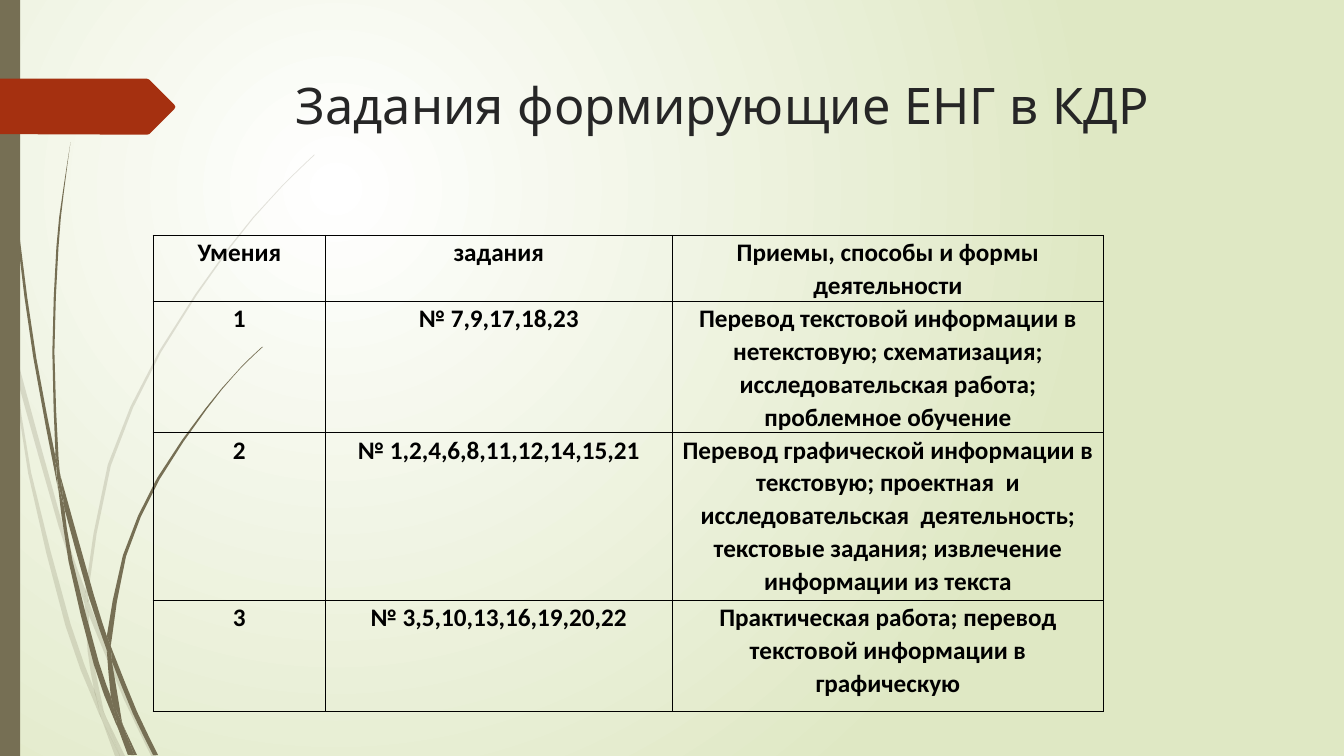
from dataclasses import dataclass
from lxml.etree import SubElement
from pptx import Presentation
from pptx.dml.color import RGBColor
from pptx.enum.shapes import MSO_SHAPE as Kind
from pptx.enum.text import MSO_ANCHOR as Anchor, PP_ALIGN as Align
from pptx.oxml.ns import qn
from pptx.util import Pt

Point = tuple[float, float]
Side = list[Point]

OLIVE, RUST, INK, BLACK = "766F54", "A53010", "262626", "000000"
WHITE, LIME = "FFFFFF", "DFE8C4"
STEPS = 2


@dataclass
class Plant:
    alpha: int
    blades: list[list[Side]]


@dataclass
class Style:
    font: str
    size: float
    color: str
    bold: bool = False


FAINT = Plant(20, [
    [[(7.9, 252), (6.5, 231.8), (0, 203)], [(0, 215.3), (7.2, 247.7)]],
    [[(12.2, 270.7), (41.8, 375.8), (60.5, 431.3)],
     [(61.2, 421.9), (44.6, 374.4), (10.1, 248.4)]],
    [[(63.4, 439.2), (88.6, 499.7), (108, 540)],
     [(111.6, 540), (91.4, 498.2), (66.2, 437), (63.4, 429.1)]],
    [[(85.7, 540)], [(89.3, 540), (75.6, 511.9)]],
    [[(7.9, 252), (20.2, 338.4), (46.8, 447.1), (66.2, 499), (72.7, 514.1)],
     [(71.3, 509), (67, 491.8), (50.4, 445.7), (22.3, 337.7), (12.2, 270.7)]],
    [[(60.5, 431.3), (62.6, 465.1), (67, 491.8), (69.1, 498.2), (75.6, 511.9)],
     [(74.2, 508.3), (65.5, 465.1), (63.4, 439.2), (63.4, 437.8)]],
    [[(63.4, 429.1), (63.4, 420.5), (79.2, 332.6), (115.2, 251.3),
      (164.9, 176.4), (193, 142.6), (208.8, 126), (224.6, 110.9)],
     [(224.6, 110.2), (208.1, 126), (193, 141.8), (164.2, 175.7),
      (113.8, 250.6), (77, 331.9), (61.2, 420.5), (61.2, 421.9)]],
    [[(72.7, 514.1), (82.1, 540)], [(85.7, 540)]],
    [[(63.4, 437.8), (63.4, 429.1)], [(61.2, 421.9), (60.5, 431.3)]],
    [[(69.1, 498.2), (67, 491.8)],
     [(71.3, 509), (72.7, 514.1), (85.7, 540)], [(75.6, 511.9)]],
])

DARK = Plant(100, [
    [[(2.2, 0), (2.9, 34.6), (5, 79.2), (12.2, 167.8), (23.8, 255.6),
      (40.3, 343.4), (41, 346.3)],
     [(39.6, 329), (39.6, 326.2), (25.9, 255.6), (13.7, 167), (5.8, 78.5),
      (3.6, 34.6), (2.9, 0)]],
    [[(46.1, 363.6), (63.4, 426.2), (76.3, 464.4)],
     [(76.3, 455.8), (76.3, 454.3), (67, 424.8), (43.2, 339.8)]],
    [[(79.9, 472.3), (95, 509.8), (109.4, 539.3)],
     [(113, 539.3), (97.9, 508.3), (81.4, 467.3), (79.2, 461.5)]],
    [[(41, 343.4), (49, 401), (67, 474.5), (79.9, 509.8), (84.2, 519.8)],
     [(83.5, 516.2), (79.2, 497.5), (70.6, 473), (51.8, 400.3), (46.1, 363.6)]],
    [[(43.2, 339.8), (41.8, 326.2), (38.9, 251.3), (41.8, 176.4),
      (45.4, 139), (50.4, 101.5)],
     [(50.4, 101.5), (44.6, 139), (40.3, 176.4), (37.4, 251.3), (39.6, 323.3)]],
    [[(95.8, 539.3), (97.9, 539.3)], [(87.8, 517.7)]],
    [[(41, 343.4), (46.1, 363.6)], [(43.2, 339.8), (39.6, 323.3), (39.6, 326.2)]],
    [[(79.2, 461.5), (79.9, 455.8), (90, 397.4), (113.8, 342.7),
      (147.6, 292.3), (166.3, 269.3), (176.4, 258.5), (187.9, 247.7)],
     [(187.2, 247.7), (176.4, 257.8), (166.3, 268.6), (146.9, 291.6),
      (112.3, 341.3), (87.8, 396.7), (76.3, 454.3)]],
    [[(84.2, 519.8), (91.4, 539.3)], [(94.3, 539.3)]],
    [[(76.3, 464.4), (79.2, 497.5), (83.5, 508.3), (87.8, 517.7)],
     [(87.1, 515.5), (79.9, 472.3), (78.5, 468.7)]],
    [[(76.3, 464.4), (79.9, 472.3)], [(79.2, 461.5), (76.3, 454.3)]],
    [[(83.5, 508.3), (79.2, 497.5)],
     [(83.5, 516.2), (84.2, 519.8), (93.6, 539.3)], [(95.8, 539.3), (87.8, 517.7)]],
])

ARROW = [(0, 56.2), (105.1, 56.2), (106.6, 56.9), (124.6, 74.9), (125.3, 76.3),
         (124.6, 77.8), (106.6, 95.8), (105.1, 96.2), (0, 95.8)]

HEAD = Style("Quicksand", 36, INK)
BODY = Style("Calibri", 18, BLACK, True)
COLS = [123.1, 247.7, 308.2]
ROWS = [47, 94, 119.5, 79.5]
CELLS = [
    ["Умения", "задания", "Приемы, способы и формы деятельности"],
    ["1", "№ 7,9,17,18,23",
     "Перевод текстовой информации в нетекстовую; схематизация; "
     "исследовательская работа; проблемное обучение"],
    ["2", "№ 1,2,4,6,8,11,12,14,15,21",
     "Перевод графической информации в текстовую; проектная  и "
     "исследовательская  деятельность; текстовые задания; "
     "извлечение информации из текста"],
    ["3", "№ 3,5,10,13,16,19,20,22",
     "Практическая работа; перевод текстовой информации в графическую"],
]


def hue(code: str) -> RGBColor:
    return RGBColor.from_string(code)


def paint(shape, code: str, alpha: int = 100) -> None:
    shape.shadow.inherit = False
    shape.line.fill.background()
    shape.fill.solid()
    shape.fill.fore_color.rgb = hue(code)
    if alpha < 100:
        color = shape.element.spPr.find(".//" + qn("a:srgbClr"))
        SubElement(color, qn("a:alpha")).set("val", str(alpha * 1000))


def curve(side: Side) -> Side:
    ends = [side[0], *side, side[-1]]
    dots = [side[0]]
    for a, b, c, d in zip(ends, ends[1:], ends[2:], ends[3:]):
        for step in range(1, STEPS + 1):
            t = step / STEPS
            x, y = (
                b[i] + t * (c[i] - a[i]) / 2
                + t**2 * (2 * a[i] - 5 * b[i] + 4 * c[i] - d[i]) / 2
                + t**3 * (3 * b[i] - a[i] - 3 * c[i] + d[i]) / 2
                for i in (0, 1))
            dots.append((x, y))
    return dots


def trace(shapes, dots: Side, code: str, alpha: int = 100) -> None:
    first, *rest = [(Pt(x), Pt(y)) for x, y in dots]
    pen = shapes.build_freeform(*first)
    pen.add_line_segments(rest, close=True)
    paint(pen.convert_to_shape(), code, alpha)


def grow(shapes, plant: Plant) -> None:
    group = shapes.add_group_shape()
    for blade in plant.blades:
        dots = [dot for side in blade for dot in curve(side)]
        trace(group.shapes, dots, OLIVE, plant.alpha)


def write(para, text: str, style: Style) -> None:
    run = para.add_run()
    run.text = text
    font = run.font
    font.name, font.size, font.bold = style.font, Pt(style.size), style.bold
    font.color.rgb = hue(style.color)


def frame(cell) -> None:
    props = cell._tc.get_or_add_tcPr()
    for edge in "LRTB":
        line = SubElement(props, qn(f"a:ln{edge}"), w=str(Pt(1)))
        fill = SubElement(line, qn("a:solidFill"))
        SubElement(fill, qn("a:srgbClr"), val=str(hue(BLACK)))
    cell.fill.background()


def fill_grid(shapes) -> None:
    grid = shapes.add_table(len(ROWS), len(COLS), Pt(109.4), Pt(168.2),
                            Pt(sum(COLS)), Pt(sum(ROWS))).table
    grid.first_row = grid.horz_banding = False
    for col, width in zip(grid.columns, COLS):
        col.width = Pt(width)
    for row, high, texts in zip(grid.rows, ROWS, CELLS):
        row.height = Pt(high)
        for cell, text in zip(row.cells, texts):
            cell.margin_left = cell.margin_right = Pt(5)
            cell.margin_top = cell.margin_bottom = Pt(0)
            frame(cell)
            para = cell.text_frame.paragraphs[0]
            para.alignment, para.line_spacing = Align.CENTER, 1.07
            write(para, text, BODY)


def glow(slide) -> None:
    fill = slide.background.fill
    fill.gradient()
    for stop, code, spot in zip(fill.gradient_stops, (WHITE, LIME), (0, 1)):
        stop.color.rgb, stop.position = hue(code), spot
    grad = slide.element.find(".//" + qn("a:gradFill"))
    line = grad.find(qn("a:lin"))
    if line is not None:
        grad.remove(line)
    ring = SubElement(grad, qn("a:path"), path="circle")
    SubElement(ring, qn("a:fillToRect"), l="50000", t="50000", r="100000", b="100000")


def main() -> None:
    deck = Presentation()
    deck.slide_width, deck.slide_height = Pt(960), Pt(540)
    slide = deck.slides.add_slide(deck.slide_layouts[6])
    shapes = slide.shapes
    glow(slide)
    for plant in (FAINT, DARK):
        grow(shapes, plant)
    paint(shapes.add_shape(Kind.RECTANGLE, 0, 0, Pt(14.4), Pt(540)), OLIVE)
    trace(shapes, ARROW, RUST)
    title = shapes.add_textbox(Pt(204.2), Pt(49.4), Pt(702), Pt(100.8)).text_frame
    title.word_wrap, title.vertical_anchor = True, Anchor.TOP
    write(title.paragraphs[0], "Задания формирующие ЕНГ в КДР", HEAD)
    fill_grid(shapes)
    deck.save("out.pptx")


if __name__ == "__main__":
    main()
